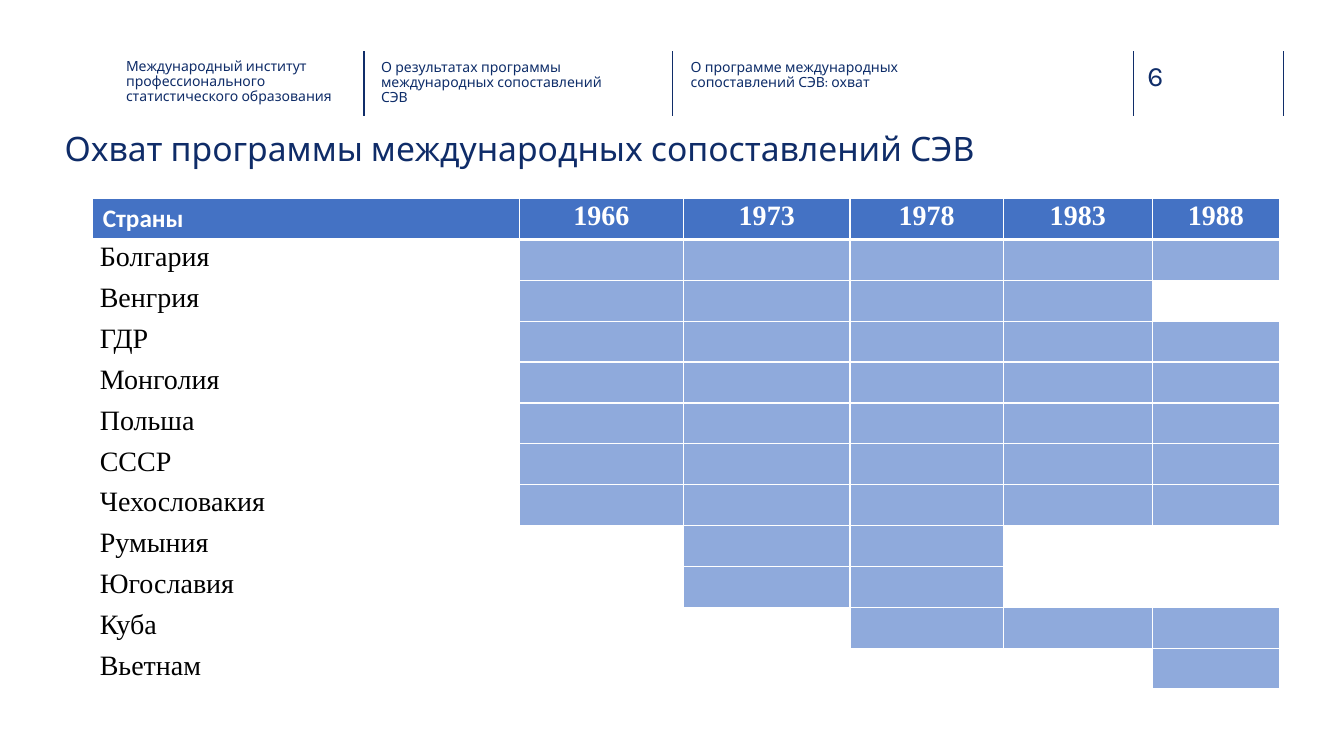
from lxml import etree
from pptx import Presentation
from pptx.dml.color import RGBColor
from pptx.enum.shapes import MSO_CONNECTOR
from pptx.enum.text import MSO_ANCHOR, MSO_AUTO_SIZE, PP_ALIGN
from pptx.oxml.ns import qn
from pptx.util import Inches, Pt

LEFT, CENTER, JUSTIFY = PP_ALIGN.LEFT, PP_ALIGN.CENTER, PP_ALIGN.JUSTIFY
NAVY, BLUE, PALE, WHITE, BLACK = "0F2C68", "4472C4", "8FAADC", "FFFFFF", "000000"
RULE = "102D69"
SERIF = "Times New Roman"


def rgb(color):
    return RGBColor.from_string(color)


def write(tf, text, size, font, color, align=LEFT, spacing=1.0, bold=False):
    p = tf.paragraphs[0]
    p.alignment, p.line_spacing = align, spacing
    r = p.add_run()
    r.text = text
    r.font.size, r.font.name, r.font.bold = Pt(size), font, bold
    r.font.color.rgb = rgb(color)
    return p


prs = Presentation()
prs.slide_width, prs.slide_height = Inches(13.33), Inches(7.5)
s = prs.slides.add_slide(prs.slide_layouts[5])

# Header rules
for x in (3.61, 6.67, 11.24, 12.73):
    line = s.shapes.add_connector(MSO_CONNECTOR.STRAIGHT, Inches(x), Inches(0.51), Inches(x), Inches(1.15))
    line.line.color.rgb, line.line.width = rgb(RULE), Pt(1)
    etree.SubElement(line._element.spPr, qn("a:effectLst"))

# Title, header texts and page number
title = s.shapes.title
texts = [
    (title, 0.64, 1.31, 10.87, 0.58, "Охват программы международных сопоставлений СЭВ", 24, NAVY, 0.9),
    (None, 1.25, 0.59, 2.08, 0.45,
     "Международный институт профессионального статистического образования", 10, NAVY, 0.9),
    (None, 3.78, 0.6, 2.26, 0.45, "О результатах программы международных сопоставлений СЭВ", 10, "0E2D69", 0.9),
    (None, 6.85, 0.6, 2.26, 0.45, "О программе международных сопоставлений СЭВ: охват", 10, "0E2D69", 0.9),
    (None, 11.38, 0.58, 0.73, 0.34, "6", 20, RULE, 1.0),
]
for sp, x, y, w, h, text, size, color, spacing in texts:
    box = [Inches(v) for v in (x, y, w, h)]
    sp = sp or s.shapes.add_textbox(*box)
    sp.left, sp.top, sp.width, sp.height = box
    tf = sp.text_frame
    tf.word_wrap, tf.auto_size, tf.vertical_anchor = True, MSO_AUTO_SIZE.NONE, MSO_ANCHOR.TOP
    tf.margin_left = tf.margin_right = tf.margin_top = tf.margin_bottom = 0
    write(tf, text, size, "Karla", color, spacing=spacing)

# Coverage table: one mark per year, 1 where the country took part
header = ["Страны", "1966", "1973", "1978", "1983", "1988"]
coverage = [
    ("Болгария", "11111"), ("Венгрия", "11110"), ("ГДР", "11111"), ("Монголия", "11111"),
    ("Польша", "11111"), ("СССР", "11111"), ("Чехословакия", "11111"), ("Румыния", "01100"),
    ("Югославия", "01100"), ("Куба", "00111"), ("Вьетнам", "00001"),
]
widths = [4.23, 1.63, 1.65, 1.52, 1.48, 1.26]
rows = len(coverage) + 1
frame = s.shapes.add_table(rows, len(widths), Inches(0.92), Inches(1.97), Inches(sum(widths)), Inches(4.87))
table = frame.table
table.first_row = table.horz_banding = False
for col, width in zip(table.columns, widths):
    col.width = Inches(width)

for i in range(rows):
    table.rows[i].height = Inches(4.87 / rows)
    for j in range(len(widths)):
        cell = table.cell(i, j)

        # White borders, thick under the header
        tcPr = cell._tc.get_or_add_tcPr()
        for side in "LRTB":
            thick = (i, side) in ((0, "B"), (1, "T"))
            ln = etree.SubElement(tcPr, qn(f"a:ln{side}"), w=str(Pt(3 if thick else 1)))
            etree.SubElement(etree.SubElement(ln, qn("a:solidFill")), qn("a:srgbClr"), val=WHITE)

        # Fill
        if i == 0 or (j > 0 and coverage[i - 1][1][j - 1] == "1"):
            cell.fill.solid()
            cell.fill.fore_color.rgb = rgb(PALE if i else BLUE)
        else:
            cell.fill.background()

        # Text
        if i == j == 0:
            write(cell.text_frame, header[0], 18, "Calibri", WHITE, bold=True)
            continue
        cell.margin_left = cell.margin_right = Inches(0.07)
        cell.margin_top = cell.margin_bottom = 0
        if i == 0:
            p = write(cell.text_frame, header[j], 20, SERIF, WHITE, CENTER, 1.07, True)
            p.space_after = Pt(8)
        elif j == 0:
            p = write(cell.text_frame, coverage[i - 1][0], 20, SERIF, BLACK, JUSTIFY, 1.07)
            p.space_after = Pt(8)

prs.save("out.pptx")
